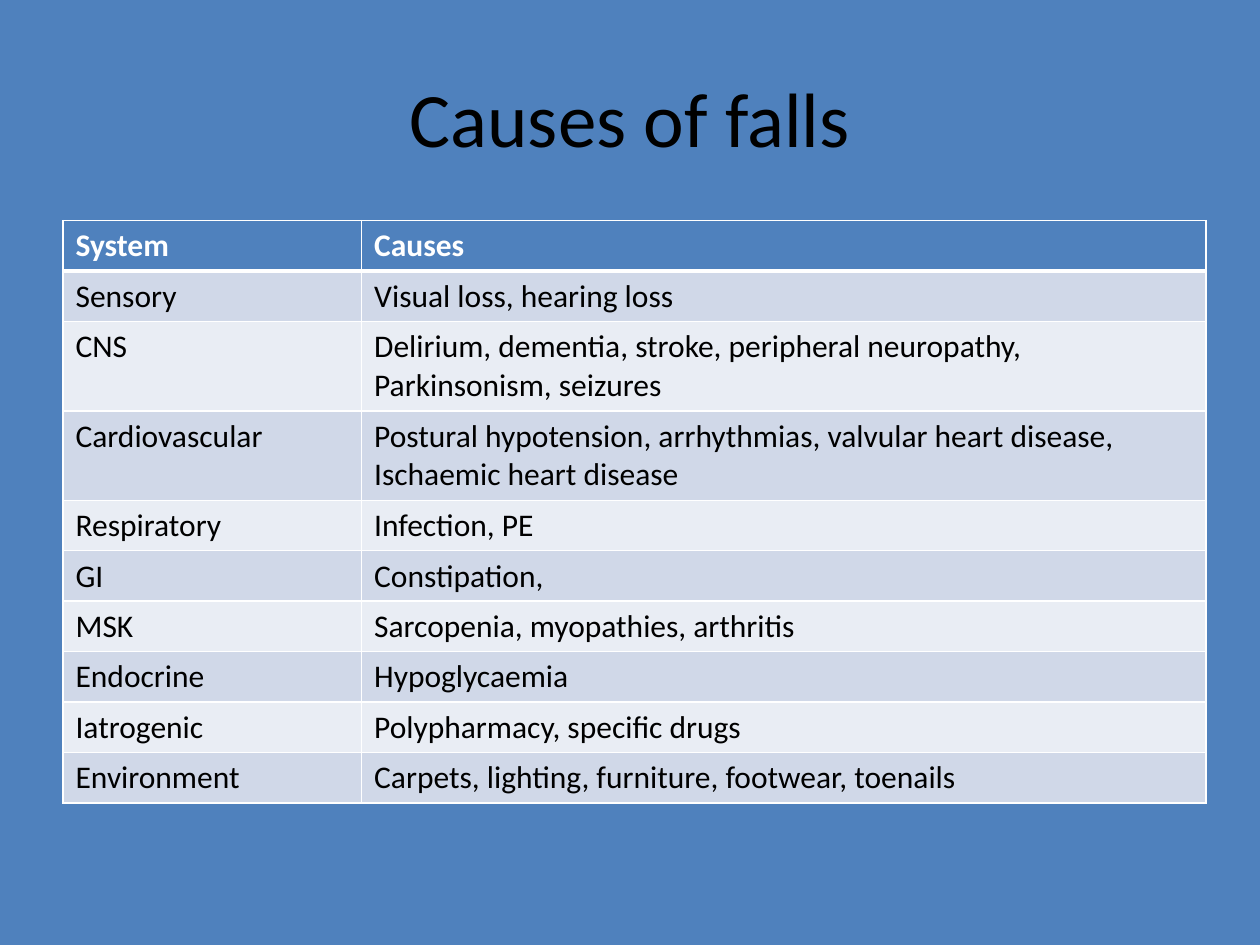
from lxml import etree
from pptx import Presentation
from pptx import util as u
from pptx.dml.color import RGBColor
from pptx.enum import text
from pptx.oxml import ns

BLUE = RGBColor(0x4F, 0x81, 0xBD)
DARK_BAND = RGBColor(0xD0, 0xD8, 0xE8)
LIGHT_BAND = RGBColor(0xE9, 0xED, 0xF4)
WHITE = RGBColor(0xFF, 0xFF, 0xFF)
BLACK = RGBColor(0, 0, 0)

ROWS = [
    ("System", "Causes"),
    ("Sensory", "Visual loss, hearing loss"),
    ("CNS", "Delirium, dementia, stroke, peripheral neuropathy, Parkinsonism, seizures"),
    ("Cardiovascular", "Postural hypotension, arrhythmias, valvular heart disease, "
                       "Ischaemic heart disease"),
    ("Respiratory", "Infection, PE"),
    ("GI", "Constipation,"),
    ("MSK", "Sarcopenia, myopathies, arthritis"),
    ("Endocrine", "Hypoglycaemia"),
    ("Iatrogenic", "Polypharmacy, specific drugs"),
    ("Environment", "Carpets, lighting, furniture, footwear, toenails"),
]
COLUMN_WIDTHS = (2.37, 6.7)
LINE_LENGTH = 60  # longer causes wrap to a second line


def add_run(para, words, size, color, bold=False):
    span = para.add_run()
    span.text = words
    span.font.name = "Calibri"
    span.font.size = u.Pt(size)
    span.font.bold = bold
    span.font.color.rgb = color


def add_border(cell, side, points):
    line = etree.SubElement(cell._tc.get_or_add_tcPr(), ns.qn(f"a:ln{side}"),
                            w=str(u.Pt(points)))
    fill = etree.SubElement(line, ns.qn("a:solidFill"))
    etree.SubElement(fill, ns.qn("a:srgbClr"), val=str(WHITE))


deck = Presentation()
deck.slide_width, deck.slide_height = u.Inches(10), u.Inches(7.5)
page = deck.slides.add_slide(deck.slide_layouts[6])
page.background.fill.solid()
page.background.fill.fore_color.rgb = BLUE

# Title
box = page.shapes.add_textbox(u.Inches(0.5), u.Inches(0.3), u.Inches(9), u.Inches(1.25))
box.text_frame.word_wrap = True
box.text_frame.vertical_anchor = text.MSO_ANCHOR.MIDDLE
para = box.text_frame.paragraphs[0]
para.alignment = text.PP_ALIGN.CENTER
add_run(para, "Causes of falls", 44, BLACK)

# Table of causes by body system
heights = [0.71 if len(causes) > LINE_LENGTH else 0.4 for _, causes in ROWS]
table = page.shapes.add_table(
    len(ROWS), len(COLUMN_WIDTHS), u.Inches(0.5), u.Inches(1.75),
    u.Inches(sum(COLUMN_WIDTHS)), u.Inches(sum(heights))).table
for column, width in zip(table.columns, COLUMN_WIDTHS):
    column.width = u.Inches(width)

for r, (entries, height) in enumerate(zip(ROWS, heights)):
    table.rows[r].height = u.Inches(height)
    header = r == 0
    band = BLUE if header else DARK_BAND if r % 2 else LIGHT_BAND
    for c, words in enumerate(entries):
        cell = table.cell(r, c)
        for side in "LRTB":
            heavy = (r, side) in ((0, "B"), (1, "T"))
            add_border(cell, side, 3 if heavy else 1)
        cell.fill.solid()
        cell.fill.fore_color.rgb = band
        add_run(cell.text_frame.paragraphs[0], words, 18,
                WHITE if header else BLACK, bold=header)

deck.save("out.pptx")
